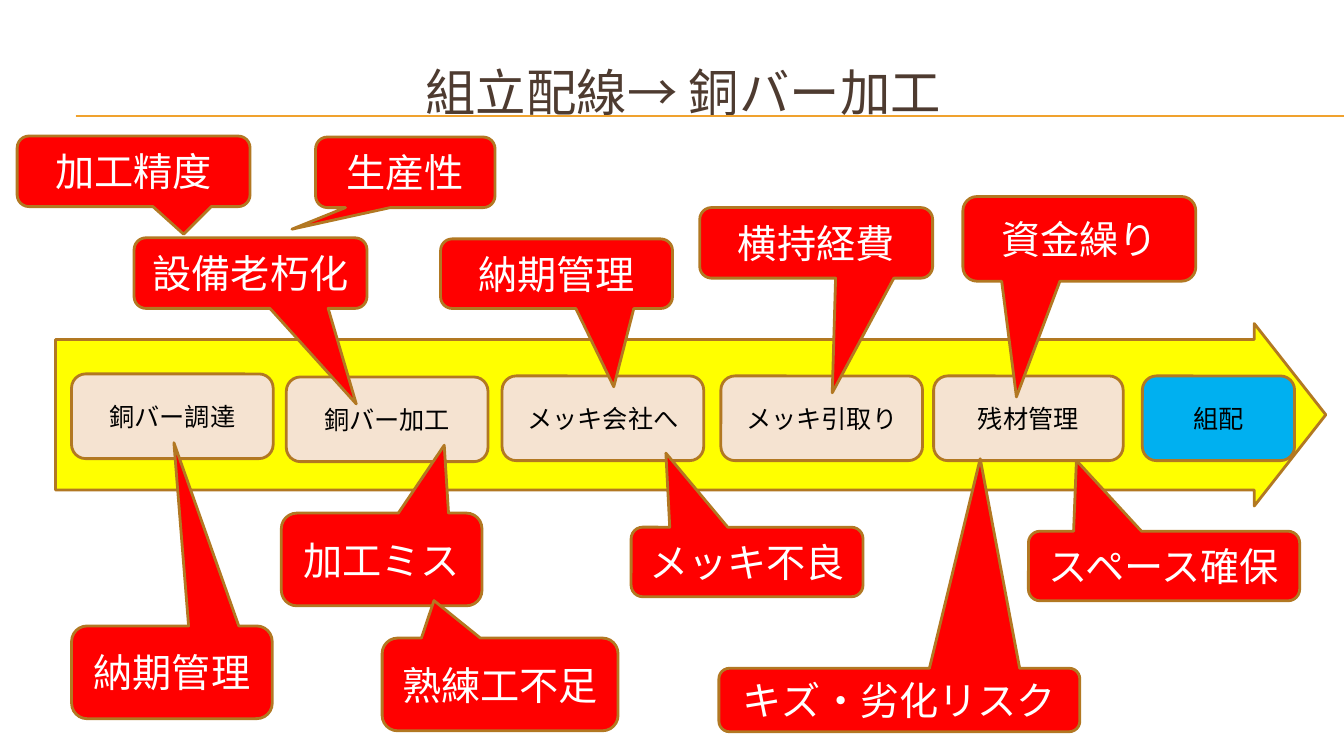
from lxml import etree
from pptx import Presentation
from pptx.dml.color import RGBColor
from pptx.enum.shapes import MSO_CONNECTOR, MSO_SHAPE
from pptx.enum.text import MSO_ANCHOR, MSO_AUTO_SIZE, PP_ALIGN
from pptx.oxml.ns import qn
from pptx.util import Inches, Pt

ARROW = MSO_SHAPE.RIGHT_ARROW
ROUNDED = MSO_SHAPE.ROUNDED_RECTANGLE
CALLOUT = MSO_SHAPE.ROUNDED_RECTANGULAR_CALLOUT
STRAIGHT = MSO_CONNECTOR.STRAIGHT
MIDDLE = MSO_ANCHOR.MIDDLE
CENTER = PP_ALIGN.CENTER
NO_AUTOFIT = MSO_AUTO_SIZE.NONE

FONT = "Roboto"
BROWN, GOLD, OUTLINE = "4E3B30", "F0A22E", "B27822"
YELLOW, BEIGE, BLUE = "FFFF00", "F5E3D1", "00B0F0"
RED, BLACK, WHITE = "FF0000", "000000", "FFFFFF"

SLIDE_WIDTH, SLIDE_HEIGHT = 13.33, 7.5
STAGE_HEIGHT = 0.84

STAGES = [
    ("銅バー調達", 0.16, 0.5, 2, BEIGE),
    ("銅バー加工", 2.29, 0.53, 2, BEIGE),
    ("メッキ会社へ", 4.43, 0.52, 2, BEIGE),
    ("メッキ引取り", 6.6, 0.52, 2, BEIGE),
    ("残材管理", 8.71, 0.52, 1.88, BEIGE),
    ("組配", 10.78, 0.52, 1.51, BLUE),
]

ISSUES = [
    ("スペース確保", (10.2, 5.27, 2.69, 0.69), (-0.323, -1.518)),
    ("加工精度", (0.17, 1.35, 2.31, 0.7), (0.215, 0.891)),
    ("横持経費", (6.94, 2.06, 2.31, 0.7), (0.069, 2.125)),
    ("メッキ不良", (6.26, 5.23, 2.3, 0.69), (-0.35, -1.565)),
    ("資金繰り", (9.55, 1.95, 2.31, 0.84), (-0.27, 1.866)),
    ("キズ・劣化リスク", (7.13, 6.63, 3.58, 0.63), (0.224, -3.8)),
    ("加工ミス", (2.79, 5.09, 1.99, 0.92), (0.312, -1.232)),
    ("熟練工不足", (3.79, 6.33, 2.34, 0.92), (-0.28, -0.904)),
    ("設備老朽化", (1.33, 2.36, 2.31, 0.7), (0.454, 1.854)),
    ("生産性", (3.13, 1.36, 1.78, 0.7), (-0.632, 0.806)),
    ("納期管理", (4.37, 2.37, 2.3, 0.69), (0.247, 1.626)),
    ("納期管理", (0.71, 6.21, 1.99, 0.92), (0.01, -2.476)),
]


def color(hex_string):
    """Return the colour for a hex string."""
    return RGBColor.from_string(hex_string)


def write(shape, wording, size, ink):
    """Write one centred line of text in a shape."""
    frame = shape.text_frame
    frame.word_wrap = True
    frame.auto_size = NO_AUTOFIT
    frame.vertical_anchor = MIDDLE
    frame.margin_left = frame.margin_right = Inches(0.05)
    paragraph = frame.paragraphs[0]
    paragraph.alignment = CENTER
    run = paragraph.add_run()
    run.text = wording
    run.font.name = FONT
    run.font.size = Pt(size)
    run.font.color.rgb = color(ink)


def add_block(slide, preset, box, fill, adjustments=()):
    """Add a filled and outlined preset shape."""
    block = slide.shapes.add_shape(preset, *map(Inches, box))
    block.shadow.inherit = False
    block.fill.solid()
    block.fill.fore_color.rgb = color(fill)
    block.line.color.rgb = color(OUTLINE)
    block.line.width = Pt(2)
    for index, value in enumerate(adjustments):
        block.adjustments[index] = value
    return block


def add_rules(slide, left, tops):
    """Draw the thin rules under the title to the right edge."""
    for top in tops:
        rule = slide.shapes.add_connector(
            STRAIGHT, Inches(left), Inches(top), Inches(SLIDE_WIDTH), Inches(top))
        rule.line.color.rgb = color(GOLD)
        rule.line.width = Pt(0.75)
        etree.SubElement(rule._element.spPr, qn("a:effectLst"))


def add_title(slide, box, wording):
    """Place and format the slide title."""
    title = slide.shapes.title
    title.left, title.top, title.width, title.height = map(Inches, box)
    write(title, wording, 36, BROWN)


def add_process(slide, box):
    """Draw the process arrow with its stages inside the box."""
    left, top = box[:2]
    add_block(slide, ARROW, box, YELLOW, (0.825, 0.392))
    for wording, dx, dy, width, fill in STAGES:
        stage_box = (left + dx, top + dy, width, STAGE_HEIGHT)
        write(add_block(slide, ROUNDED, stage_box, fill), wording, 18, BLACK)


def add_issue(slide, box, wording, tip):
    """Draw a callout whose tip is given as shares of its box."""
    issue = add_block(slide, CALLOUT, box, RED, (*tip, 0.167))
    write(issue, wording, 28, WHITE)


def main():
    """Build and save the slide."""
    deck = Presentation()
    deck.slide_width = Inches(SLIDE_WIDTH)
    deck.slide_height = Inches(SLIDE_HEIGHT)
    slide = deck.slides.add_slide(deck.slide_layouts[5])
    add_rules(slide, 0.75, (1.15, 1.16))
    add_title(slide, (0.44, 0.45, 12.67, 0.92), "組立配線→ 銅バー加工")
    add_process(slide, (0.55, 3.21, 12.6, 1.81))
    for wording, box, tip in ISSUES:
        add_issue(slide, box, wording, tip)
    deck.save("out.pptx")


if __name__ == "__main__":
    main()
